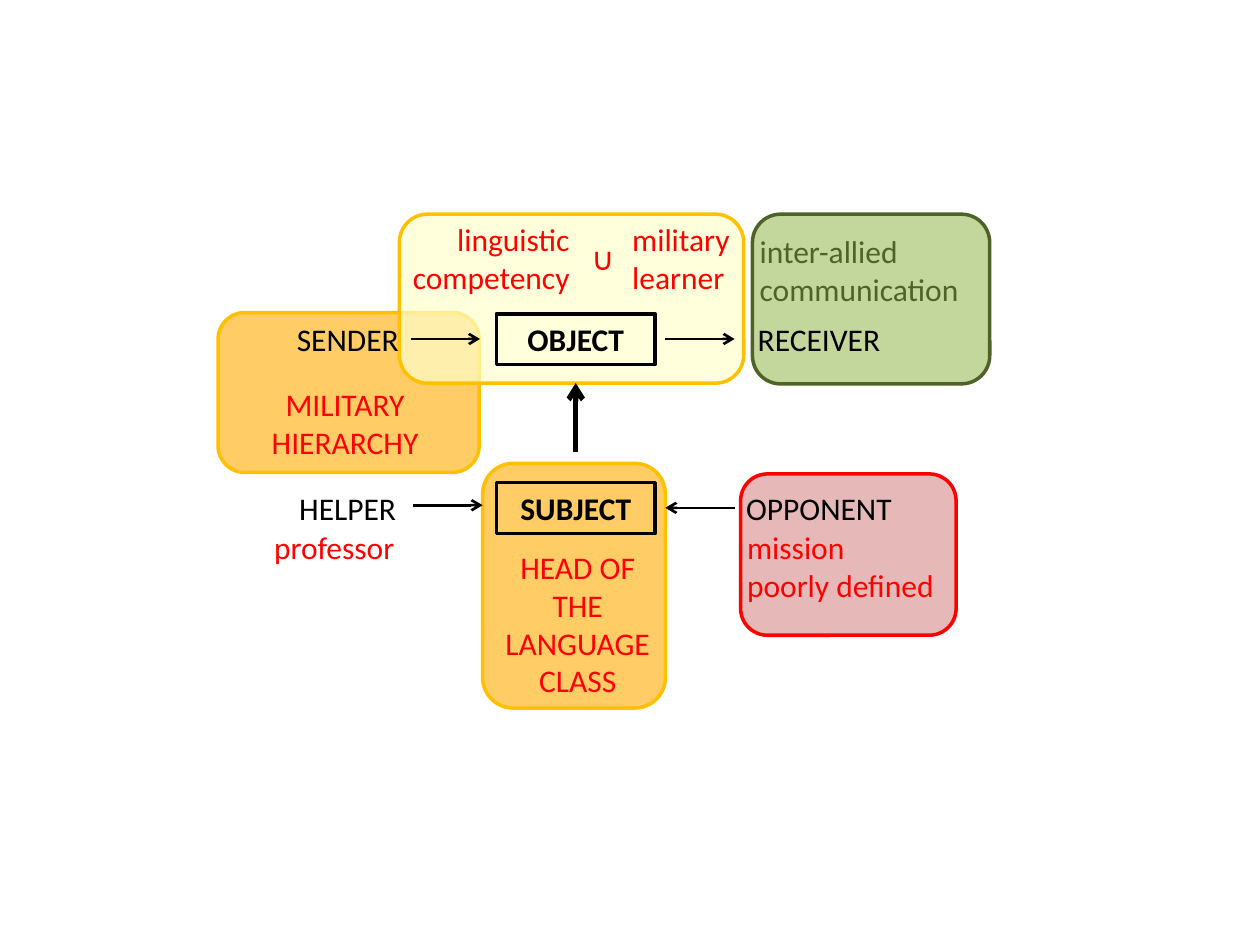
from lxml import etree
from pptx import Presentation
from pptx.dml.color import RGBColor
from pptx.enum.shapes import MSO_CONNECTOR, MSO_SHAPE
from pptx.enum.text import PP_ALIGN
from pptx.oxml.ns import qn
from pptx.util import Pt

HUES = {
    "black": "000000", "red": "FF0000", "gold": "FFC000", "amber": "FFCC66",
    "cream": "FFFFCC", "moss": "4F6228", "sage": "C3D69B", "rose": "E6B9B8",
}
LEFT, MID, RIGHT = PP_ALIGN.LEFT, PP_ALIGN.CENTER, PP_ALIGN.RIGHT
TOP, LOW = 179.3, 275.8  # the two rows of roles
ROW = 29


def hue(name):
    return RGBColor.from_string(HUES[name])


def write(shape, lines, color, align, bold=False):
    frame = shape.text_frame
    frame.word_wrap = True
    for i, line in enumerate(lines):
        para = frame.paragraphs[0] if i == 0 else frame.add_paragraph()
        para.alignment = align
        run = para.add_run()
        run.text = line
        font = run.font
        font.name, font.size, font.bold = "Calibri", Pt(18), bold
        font.color.rgb = hue(color)


deck = Presentation()
deck.slide_width, deck.slide_height = Pt(720), Pt(540)
slide = deck.slides.add_slide(deck.slide_layouts[6])
shapes = slide.shapes

# Rounded panels, back to front: box, fill, line, opacity in percent
panels = [
    ((430, 122.4, 135.6, 97), "sage", "moss", 100),
    ((423.2, 270.8, 123.2, 92.2), "rose", "red", 100),
    ((124.6, 178.6, 149.2, 91.4), "amber", "gold", 100),
    ((275.8, 264.8, 104.4, 139.8), "amber", "gold", 100),
    ((228.2, 122.4, 196.8, 96.6), "cream", "gold", 70),
]
for box, fill, edge, alpha in panels:
    panel = shapes.add_shape(MSO_SHAPE.ROUNDED_RECTANGLE, *map(Pt, box))
    panel.shadow.inherit = False
    panel.fill.solid()
    panel.fill.fore_color.rgb = hue(fill)
    panel.line.color.rgb = hue(edge)
    panel.line.width = Pt(2)
    if alpha < 100:
        tint = panel.fill._xPr.find(qn("a:solidFill"))[0]
        etree.SubElement(tint, qn("a:alpha")).set("val", str(alpha * 1000))

# Role names and the notes on them
texts = [
    ((153.4, TOP, 90.7, ROW), ["SENDER"], "black", MID),
    ((144.7, LOW, 108, ROW), ["HELPER"], "black", MID),
    ((414, LOW, 108, ROW), ["OPPONENT"], "black", MID),
    ((414, TOP, 108, ROW), ["RECEIVER"], "black", MID),
    ((116.6, 216.7, 161.3, 51), ["MILITARY HIERARCHY"], "red", MID),
    ((274.3, 309.6, 111.6, 94.5), ["HEAD OF THE LANGUAGE CLASS"], "red", MID),
    ((329, 133.2, 31, ROW), ["∪"], "red", MID),
    ((221, 122.4, 111.6, 51), ["linguistic", "competency"], "red", RIGHT),
    ((354.2, 122.4, 76.3, 51), ["military", "learner"], "red", LEFT),
    ((96.5, 298.1, 136, ROW), ["professor"], "red", RIGHT),
    ((419.8, 298.1, 130.3, 51), ["mission", "poorly defined"], "red", LEFT),
    ((427, 128.9, 136, 51), ["inter-allied communication"], "moss", LEFT),
]
for box, lines, color, align in texts:
    write(shapes.add_textbox(*map(Pt, box)), lines, color, align)

# Framed roles
for name, y in (("OBJECT", TOP), ("SUBJECT", LOW)):
    frame = shapes.add_shape(MSO_SHAPE.RECTANGLE, Pt(283.7), Pt(y), Pt(90.7), Pt(ROW))
    frame.shadow.inherit = False
    frame.fill.background()
    frame.line.color.rgb = hue("black")
    frame.line.width = Pt(2)
    write(frame, [name], "black", MID, bold=True)

# Arrows: start, end, width
arrows = [
    ((329, 258.5), (329, 218.9), 3),
    ((234.7, 193.7), (274.3, 193.7), 1.5),
    ((380.2, 193.7), (419.8, 193.7), 1.5),
    ((236.2, 288.7), (275.8, 288.7), 1.5),
    ((419.8, 290.2), (380.2, 290.2), 1.5),
]
for start, end, width in arrows:
    arrow = shapes.add_connector(MSO_CONNECTOR.STRAIGHT, *map(Pt, start + end))
    arrow.line.color.rgb = hue("black")
    arrow.line.width = Pt(width)
    etree.SubElement(arrow.line._get_or_add_ln(), qn("a:tailEnd")).set("type", "arrow")
    etree.SubElement(arrow._element.spPr, qn("a:effectLst"))

deck.save("out.pptx")
